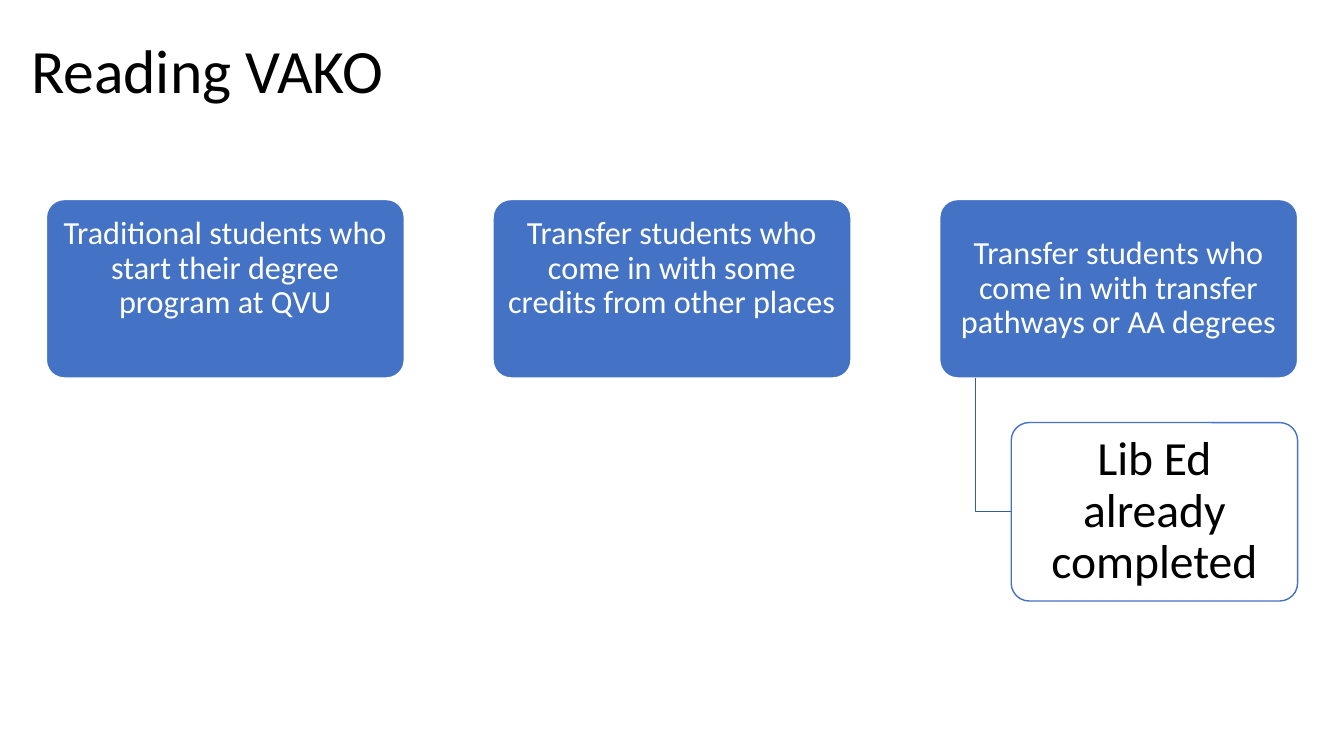
from pptx import Presentation
from pptx.dml.color import RGBColor
from pptx.enum.shapes import MSO_SHAPE
from pptx.enum.text import MSO_ANCHOR, PP_ALIGN
from pptx.util import Inches, Pt

TITLE = "Reading VAKO"
GROUPS = [
    ("Traditional students who start their degree program at QVU", 0.43),
    ("Transfer students who come in with some credits from other places", 0.43),
    ("Transfer students who come in with transfer pathways or AA degrees", 0.03),
]
OUTCOME = "Lib Ed already completed"

BLUE = RGBColor(0x44, 0x72, 0xC4)
DARK_BLUE = RGBColor(0x36, 0x5B, 0x9D)
WHITE = RGBColor(0xFF, 0xFF, 0xFF)
BLACK = RGBColor(0x00, 0x00, 0x00)

LEFT, TOP, PITCH = 0.46, 1.98, 4.43
WIDTH, HEIGHT = 3.55, 1.77
INDENT = WIDTH / 10
OUTCOME_TOP = TOP + HEIGHT * 1.25


def set_all(target, values):
    for name, value in values.items():
        setattr(target, name, value)


def write(shape, text, size, color, align, insets):
    frame = shape.text_frame
    sides = ("margin_left", "margin_top", "margin_right", "margin_bottom")
    set_all(frame, {"word_wrap": True, "vertical_anchor": MSO_ANCHOR.MIDDLE})
    set_all(frame, dict(zip(sides, map(Inches, insets))))
    para = frame.paragraphs[0]
    set_all(para, {"alignment": align, "line_spacing": 0.9})
    span = para.add_run()
    span.text = text
    set_all(span.font, {"name": "Calibri", "size": Pt(size)})
    span.font.color.rgb = color


def add_card(page, place, fill, line, text, size, color, insets):
    card = page.shapes.add_shape(MSO_SHAPE.ROUNDED_RECTANGLE, *map(Inches, place))
    card.adjustments[0] = 0.1
    card.shadow.inherit = False
    card.fill.solid()
    card.fill.fore_color.rgb = fill
    card.line.color.rgb = line
    card.line.width = Pt(1)
    write(card, text, size, color, PP_ALIGN.CENTER, insets)


def add_elbow(page, start, corner, end):
    builder = page.shapes.build_freeform(*map(Inches, start))
    builder.add_line_segments([tuple(map(Inches, point)) for point in (corner, end)], close=False)
    elbow = builder.convert_to_shape()
    elbow.shadow.inherit = False
    elbow.fill.background()
    elbow.line.color.rgb = DARK_BLUE
    elbow.line.width = Pt(1)


def main():
    deck = Presentation()
    set_all(deck, {"slide_width": Inches(13.33), "slide_height": Inches(7.5)})
    page = deck.slides.add_slide(deck.slide_layouts[6])

    title = page.shapes.add_textbox(*map(Inches, (0.21, 0, 11.5, 1.45)))
    write(title, TITLE, 44, BLACK, PP_ALIGN.LEFT, (0.1, 0.05, 0.1, 0.05))

    for column, (text, bottom_inset) in enumerate(GROUPS):
        place = (LEFT + column * PITCH, TOP, WIDTH, HEIGHT)
        add_card(page, place, BLUE, WHITE, text, 23, WHITE, (0.05, 0.03, 0.05, bottom_inset))

    parent_left = LEFT + (len(GROUPS) - 1) * PITCH
    stem = parent_left + INDENT
    outcome_left = stem + INDENT
    middle = OUTCOME_TOP + HEIGHT / 2
    add_elbow(page, (stem, TOP + HEIGHT), (stem, middle), (outcome_left, middle))
    place = (outcome_left, OUTCOME_TOP, WIDTH * 0.8, HEIGHT)
    add_card(page, place, WHITE, BLUE, OUTCOME, 34, BLACK, (0.07, 0.05, 0.07, 0.05))

    deck.save("out.pptx")


if __name__ == "__main__":
    main()
